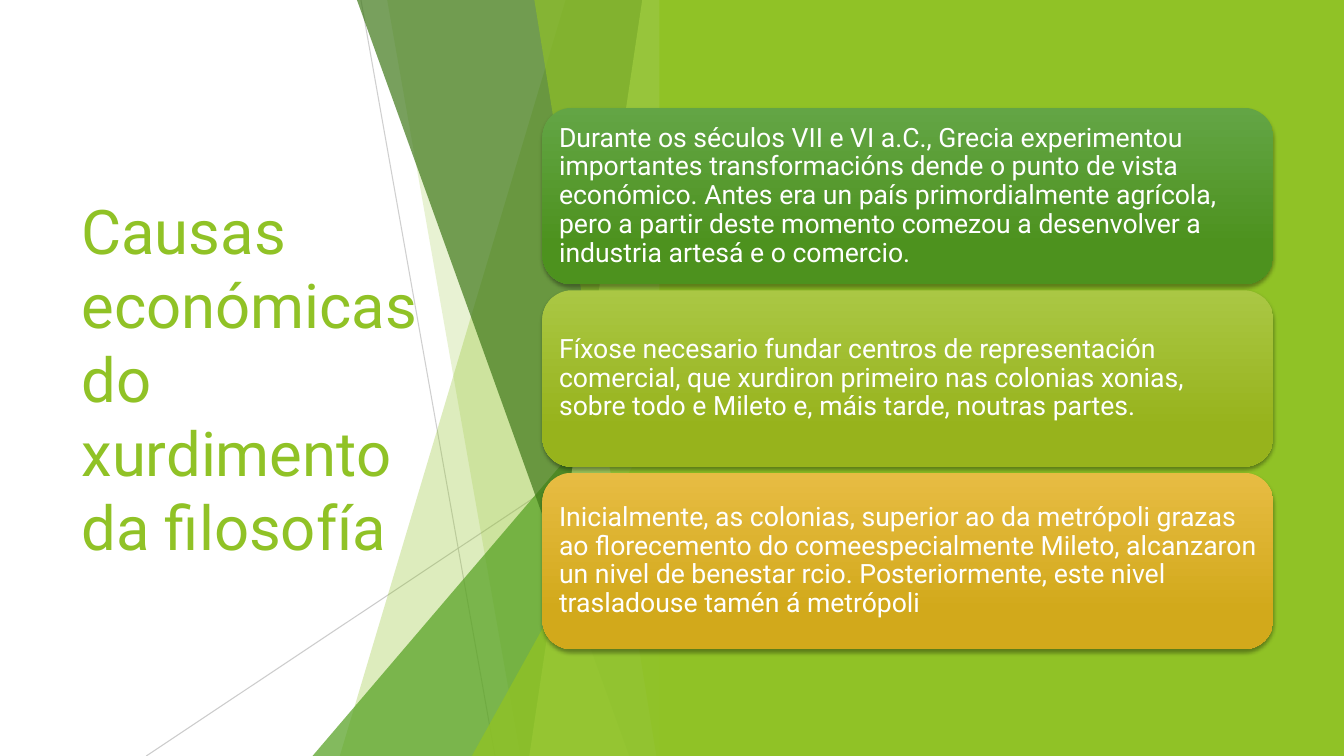
from lxml import etree
from pptx import Presentation
from pptx.dml.color import RGBColor
from pptx.enum import shapes, text
from pptx.oxml import ns
from pptx.util import Inches, Pt

GREEN = "90C226"
FONT = "Roboto"


def rgb(color):
    return RGBColor.from_string(color)


def paint(part, color, opacity=100):
    """Give a solid fill or line colour with an opacity in percent."""
    fill = part.fill
    fill.solid()
    fill.fore_color.rgb = rgb(color)
    if opacity < 100:
        holder = fill._xPr.find(ns.qn("a:solidFill"))
        etree.SubElement(holder[0], ns.qn("a:alpha"), val=str(opacity * 1000))


prs = Presentation()
prs.slide_width, prs.slide_height = Inches(13.33), Inches(7.5)
slide = prs.slides.add_slide(prs.slide_layouts[6])
canvas = slide.shapes

# Title
title = canvas.add_textbox(Inches(0.71), Inches(1.51), Inches(3.88), Inches(4.48))
title_frame = title.text_frame
title_frame.word_wrap = True
title_frame.vertical_anchor = text.MSO_ANCHOR.MIDDLE
heading = title_frame.paragraphs[0].add_run()
heading.text = "Causas económicas do xurdimento da filosofía"
heading.font.name, heading.font.size = FONT, Pt(44)
heading.font.color.rgb = rgb(GREEN)

# Thin lines behind the facets
for x1, y1, x2, y2, opacity in [(3.58, 0, 4.91, 7.5, 75), (6.66, 4.03, 1.45, 7.5, 80)]:
    ray = canvas.add_connector(shapes.MSO_CONNECTOR.STRAIGHT,
                               Inches(x1), Inches(y1), Inches(x2), Inches(y2))
    ray.line.width = Pt(0.75)
    paint(ray.line, "BFBFBF", opacity)
    etree.SubElement(ray._element.spPr, ns.qn("a:effectLst"))

# Facets reach from the top to the bottom edge (x of top left, x of bottom left);
# wedges are right triangles (left, top). All end at the same right edge.
FACET_RIGHT = 6.66
facets = [
    ("facet", 5.61, 3.37, GREEN, 30),
    ("facet", 3.84, 5.16, GREEN, 20),
    ("wedge", 3.1, 3.33, "54A021", 72),
    ("facet", 3.54, 6.24, "3F7819", 70),
    ("facet", 6.37, 5.25, "C0E474", 70),
    ("facet", 5.3, 6.51, GREEN, 65),
    ("wedge", 4.68, 3.93, GREEN, 80),
]
for kind, first, second, color, opacity in facets:
    if kind == "wedge":
        facet = canvas.add_shape(shapes.MSO_SHAPE.ISOSCELES_TRIANGLE, Inches(first), Inches(second),
                                 Inches(FACET_RIGHT - first), Inches(7.5 - second))
        facet.adjustments[0] = 1
    else:
        outline = canvas.build_freeform(Inches(first), 0)
        outline.add_line_segments([(Inches(x), Inches(y)) for x, y in
                                   [(FACET_RIGHT, 0), (FACET_RIGHT, 7.5), (second, 7.5)]])
        facet = outline.convert_to_shape()
    facet.shadow.inherit = False
    facet.line.fill.background()
    paint(facet, color, opacity)

panel = canvas.add_shape(shapes.MSO_SHAPE.RECTANGLE, Inches(6.54), 0, Inches(6.79), Inches(7.5))
panel.shadow.inherit = False
panel.line.fill.background()
paint(panel, GREEN)

# Cards with the three causes
causes = [
    ("63A545", "4D921E",
     "Durante os séculos VII e VI a.C., Grecia experimentou importantes transformacións dende o "
     "punto de vista económico. Antes era un país primordialmente agrícola, pero a partir deste "
     "momento comezou a desenvolver a industria artesá e o comercio."),
    ("AAC744", "97B31C",
     "Fíxose necesario fundar centros de representación comercial, que xurdiron primeiro nas "
     "colonias xonias, sobre todo e Mileto e, máis tarde, noutras partes."),
    ("E7BC43", "D2A91B",
     "Inicialmente, as colonias, superior ao da metrópoli grazas ao florecemento do "
     "comeespecialmente Mileto, alcanzaron un nivel de benestar rcio. Posteriormente, este nivel "
     "trasladouse tamén á metrópoli"),
]
for row, (top_color, bottom_color, wording) in enumerate(causes):
    card = canvas.add_shape(shapes.MSO_SHAPE.ROUNDED_RECTANGLE, Inches(5.38),
                            Inches(1.07 + 1.81 * row), Inches(7.25), Inches(1.75))
    card.line.fill.background()
    card.fill.gradient()
    card.fill.gradient_angle = 270
    for stop, color, position in zip(card.fill.gradient_stops, (top_color, bottom_color), (0, 0.78)):
        stop.color.rgb = rgb(color)
        stop.position = position

    card.shadow.inherit = False
    effects = card._element.spPr.find(ns.qn("a:effectLst"))
    shade = etree.SubElement(effects, ns.qn("a:outerShdw"), blurRad=str(Pt(3)), dist=str(Pt(2)),
                             dir="5400000", rotWithShape="0")
    shade_color = etree.SubElement(shade, ns.qn("a:srgbClr"), val="000000")
    etree.SubElement(shade_color, ns.qn("a:alpha"), val="35000")

    frame = card.text_frame
    frame.word_wrap = True
    frame.vertical_anchor = text.MSO_ANCHOR.MIDDLE
    for side in ("left", "top", "right", "bottom"):
        setattr(frame, f"margin_{side}", Inches(0.08))
    paragraph = frame.paragraphs[0]
    paragraph.alignment = text.PP_ALIGN.LEFT
    paragraph.line_spacing = 0.9
    cause = paragraph.add_run()
    cause.text = wording
    cause.font.name, cause.font.size = FONT, Pt(19)
    cause.font.color.rgb = rgb("FFFFFF")

prs.save("out.pptx")
